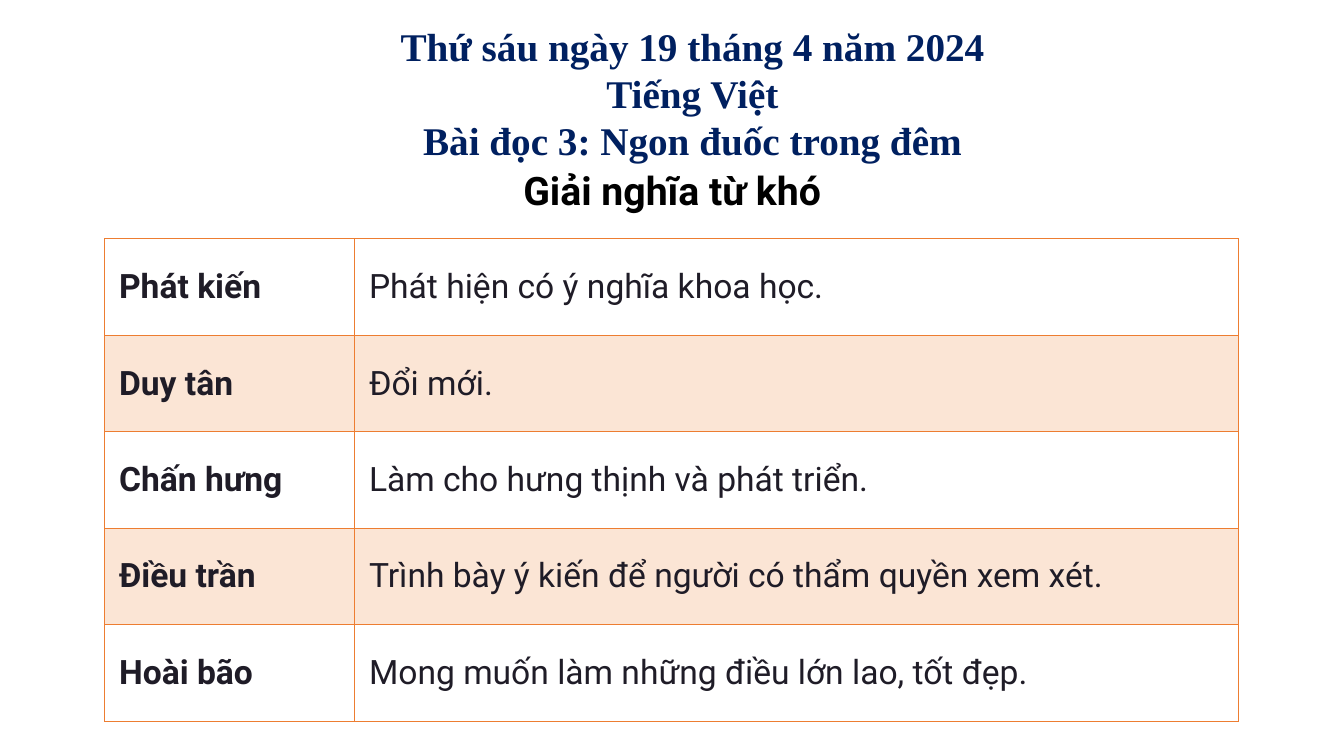
from lxml.etree import SubElement
from pptx import Presentation
from pptx.dml.color import RGBColor
from pptx.enum.text import MSO_ANCHOR, MSO_AUTO_SIZE, PP_ALIGN
from pptx.oxml.ns import qn
from pptx.util import Cm, Pt

ORANGE = "ED7D31"
TITLE = ["Thứ sáu ngày 19 tháng 4 năm 2024", "Tiếng Việt",
         "Bài đọc 3: Ngon đuốc trong đêm"]
WORDS = [
    ("Phát kiến", "Phát hiện có ý nghĩa khoa học."),
    ("Duy tân", "Đổi mới."),
    ("Chấn hưng", "Làm cho hưng thịnh và phát triển."),
    ("Điều trần", "Trình bày ý kiến để người có thẩm quyền xem xét."),
    ("Hoài bão", "Mong muốn làm những điều lớn lao, tốt đẹp."),
]


def rgb(code):
    return RGBColor.from_string(code)


class Page:
    sans = "Roboto"
    serif = "Times New Roman"

    def __init__(self, slide):
        self.slide = slide

    def style(self, para, text, face, size, color, bold, align):
        """Set the text of a paragraph and its look."""
        para.text = text
        para.alignment = align
        font = para.font
        font.name, font.size, font.bold = face, Pt(size), bold
        font.color.rgb = rgb(color)

    def label(self, box, lines, face, color, inset=(0.25, 0.13),
              anchor=MSO_ANCHOR.TOP, fit=MSO_AUTO_SIZE.NONE):
        frame = self.slide.shapes.add_textbox(*map(Cm, box)).text_frame
        frame.word_wrap = True
        frame.auto_size = fit
        frame.vertical_anchor = anchor
        frame.margin_left = frame.margin_right = Cm(inset[0])
        frame.margin_top = frame.margin_bottom = Cm(inset[1])
        for i, line in enumerate(lines):
            para = frame.add_paragraph() if i else frame.paragraphs[0]
            self.style(para, line, face, 28, color, True, PP_ALIGN.CENTER)

    def border(self, cell, color, width):
        props = cell._tc.get_or_add_tcPr()
        for side in ("lnL", "lnR", "lnT", "lnB"):
            line = SubElement(props, qn(f"a:{side}"), w=str(Pt(width)))
            fill = SubElement(line, qn("a:solidFill"))
            SubElement(fill, qn("a:srgbClr"), val=color)

    def tint(self, cell, color, percent):
        """Fill the cell with a see-through colour."""
        cell.fill.solid()
        cell.fill.fore_color.rgb = rgb(color)
        tone = cell._tc.tcPr.find(qn("a:solidFill")).find(qn("a:srgbClr"))
        SubElement(tone, qn("a:alpha"), val=str(percent * 1000))

    def table(self, left, top, widths, height, rows):
        """Draw rows of term and meaning, every second one tinted."""
        frame = self.slide.shapes.add_table(
            len(rows), len(widths), Cm(left), Cm(top),
            Cm(sum(widths)), Cm(height * len(rows)))
        grid = frame.table
        grid.first_row = grid.horz_banding = False
        for col, width in zip(grid.columns, widths):
            col.width = Cm(width)
        for r, row in enumerate(rows):
            grid.rows[r].height = Cm(height)
            for c, text in enumerate(row):
                cell = grid.cell(r, c)
                cell.vertical_anchor = MSO_ANCHOR.MIDDLE
                cell.margin_left = cell.margin_right = Cm(0.36)
                cell.margin_top = cell.margin_bottom = Cm(0.18)
                self.border(cell, ORANGE, 0.75)
                if r % 2:
                    self.tint(cell, ORANGE, 20)
                else:
                    cell.fill.background()
                term = c == 0
                align = PP_ALIGN.JUSTIFY if term else PP_ALIGN.LEFT
                self.style(cell.text_frame.paragraphs[0], text, self.sans,
                           24, "1F1C27", term, align)


def main():
    deck = Presentation()
    deck.slide_width, deck.slide_height = Cm(33.87), Cm(19.05)
    page = Page(deck.slides.add_slide(deck.slide_layouts[6]))
    page.label((10.26, 3.84, 13.36, 1.9), ["Giải nghĩa từ khó"], page.sans,
               "000000", inset=(0.33, 0.33), anchor=MSO_ANCHOR.MIDDLE)
    page.table(2.64, 6.02, (6.3, 22.28), 2.43, WORDS)
    page.label((4.37, 0.43, 26.16, 3.84), TITLE, page.serif, "002060",
               fit=MSO_AUTO_SIZE.SHAPE_TO_FIT_TEXT)
    deck.save("out.pptx")


if __name__ == "__main__":
    main()
